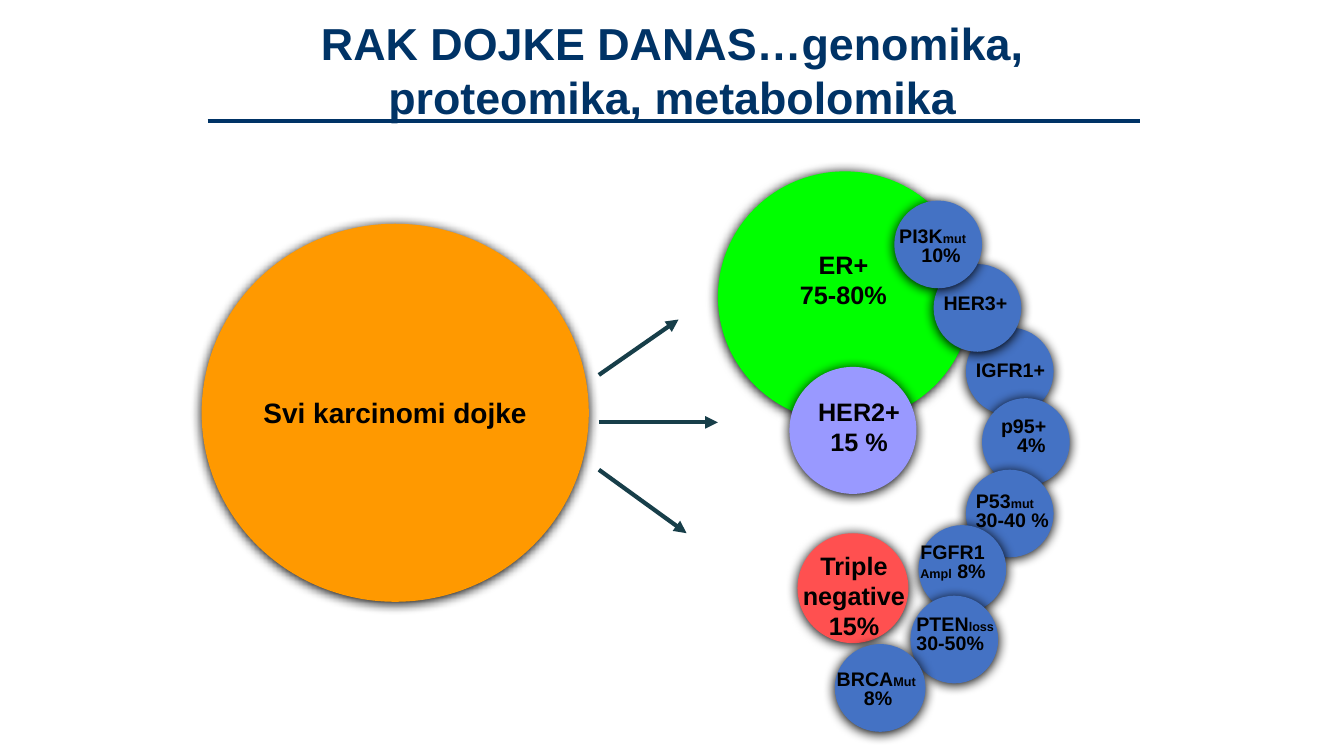
import dataclasses

import lxml.etree
import pptx
import pptx.dml.color
import pptx.enum.shapes
import pptx.enum.text
import pptx.oxml
import pptx.oxml.ns
import pptx.shapes.autoshape
import pptx.shapes.connector
import pptx.slide
import pptx.text.text
import pptx.util

Inches = pptx.util.Inches
Align = pptx.enum.text.PP_ALIGN
Anchor = pptx.enum.text.MSO_ANCHOR
Fit = pptx.enum.text.MSO_AUTO_SIZE

COLORS = {
    "navy": "003366",
    "black": "000000",
    "teal": "173E49",
    "green": "00FF00",
    "lilac": "9999FF",
    "red": "FF5050",
    "orange": "FF9900",
    "blue": "4472C4",
}
FONT = "Arial"
SMALL = 9
SPOT = 0.87


@dataclasses.dataclass
class Circle:
    left: float
    top: float
    width: float = SPOT
    height: float = SPOT
    color: str = "blue"


@dataclasses.dataclass
class Line:
    runs: list[tuple[str, int]]
    indent: float = 0


@dataclasses.dataclass
class Label:
    left: float
    top: float
    width: float
    height: float
    lines: list[Line]
    align: Align = Align.LEFT
    wrap: bool = True
    space: float = 1.0


@dataclasses.dataclass
class Stroke:
    start: tuple[float, float]
    end: tuple[float, float]
    color: str = "teal"
    weight: float = 3
    arrow: bool = True


def big(*texts: str, size: int = 18) -> list[Line]:
    return [Line([(text, size)]) for text in texts]


def gene(left: float, top: float, width: float, *lines: Line) -> Label:
    return Label(left, top, width, 0.48, list(lines), space=0.8)


CIRCLES = [
    Circle(7.12, 1.7, 2.52, 2.49, "green"),
    Circle(7.83, 3.64, 1.26, 1.26, "lilac"),
    Circle(7.91, 5.29, 1.1, 1.09, "red"),
    Circle(9.58, 3.25),
    Circle(9.74, 3.95),
    Circle(9.58, 4.66),
    Circle(9.11, 5.21),
    Circle(9.26, 2.62),
    Circle(9.03, 5.91),
    Circle(8.87, 1.99),
    Circle(8.28, 6.39, 0.9),
]
SOURCE = Circle(2, 2.22, 3.84, 3.75, "orange")

LABELS = [
    Label(7.83, 2.42, 1.07, 0.71, big("ER+", "75-80%"), Align.CENTER, False),
    Label(8.01, 3.88, 1.02, 0.71, big("HER2+", "15 %"), Align.CENTER, False),
    Label(7.67, 5.41, 1.6, 1.01, big("Triple negative", "15%"), Align.CENTER),
    Label(9.26, 2.84, 1.02, 0.34, big("HER3+", size=14)),
    Label(9.58, 3.5, 1.02, 0.34, big("IGFR1+", size=14)),
    gene(9.83, 4.1, 0.79, Line([("p95+", 14)]), Line([("4%", 14)], 0.16)),
    gene(9.58, 4.85, 1.18, Line([("P53", 14), ("mut", SMALL)]), Line([("30-40 %", 14)])),
    gene(9.03, 5.35, 1.26, Line([("FGFR1", 14)]), Line([("Ampl", SMALL), (" 8%", 14)])),
    gene(8.99, 6.07, 1.22, Line([("PTEN", 14), ("loss", SMALL)]), Line([("30-50%", 14)])),
    gene(8.82, 2.22, 1.26, Line([("PI3K", 14), ("mut", SMALL)]), Line([("10%", 14)], 0.22)),
    gene(8.2, 6.61, 1.18, Line([("BRCA", 14), ("Mut", SMALL)]), Line([("8%", 14)], 0.27)),
]

STROKES = [
    Stroke((2.06, 1.2), (11.31, 1.2), "navy", 2.25, False),
    Stroke((5.94, 3.72), (6.73, 3.17)),
    Stroke((5.94, 4.66), (6.81, 5.29)),
    Stroke((5.94, 4.19), (7.12, 4.19)),
]


def paint(name: str) -> pptx.dml.color.RGBColor:
    return pptx.dml.color.RGBColor.from_string(COLORS[name])


def write(
    frame: pptx.text.text.TextFrame,
    lines: list[Line],
    *,
    color: str = "black",
    align: Align = Align.CENTER,
    anchor: Anchor = Anchor.TOP,
    wrap: bool = True,
    space: float = 1.0,
    fit: Fit = Fit.NONE,
) -> None:
    frame.word_wrap = wrap
    frame.auto_size = fit
    frame.vertical_anchor = anchor
    for index, line in enumerate(lines):
        para = frame.add_paragraph() if index else frame.paragraphs[0]
        para.alignment = align
        para.line_spacing = space
        if line.indent:
            para._p.get_or_add_pPr().set("marL", str(Inches(line.indent)))
        for text, size in line.runs:
            run = para.add_run()
            run.text = text
            run.font.name = FONT
            run.font.size = pptx.util.Pt(size)
            run.font.bold = True
            run.font.color.rgb = paint(color)


def shade(shape: pptx.shapes.autoshape.Shape) -> None:
    shape.shadow.inherit = False
    effects = shape._element.spPr.find(pptx.oxml.ns.qn("a:effectLst"))
    shadow = lxml.etree.SubElement(
        effects,
        pptx.oxml.ns.qn("a:outerShdw"),
        blurRad=str(pptx.util.Pt(8.5)),
        dist=str(pptx.util.Pt(1)),
        dir="5400000",
        rotWithShape="0",
    )
    lxml.etree.SubElement(shadow, pptx.oxml.ns.qn("a:srgbClr"), val=COLORS["black"])


def draw(slide: pptx.slide.Slide, disc: Circle) -> pptx.shapes.autoshape.Shape:
    shape = slide.shapes.add_shape(
        pptx.enum.shapes.MSO_SHAPE.OVAL,
        Inches(disc.left), Inches(disc.top), Inches(disc.width), Inches(disc.height),
    )
    shape.fill.solid()
    shape.fill.fore_color.rgb = paint(disc.color)
    shape.line.fill.background()
    shade(shape)
    return shape


def place(slide: pptx.slide.Slide, label: Label) -> None:
    box = slide.shapes.add_textbox(
        Inches(label.left), Inches(label.top), Inches(label.width), Inches(label.height)
    )
    write(box.text_frame, label.lines, align=label.align, wrap=label.wrap,
          space=label.space, fit=Fit.SHAPE_TO_FIT_TEXT)


def join(slide: pptx.slide.Slide, stroke: Stroke) -> None:
    link = slide.shapes.add_connector(
        pptx.enum.shapes.MSO_CONNECTOR.STRAIGHT,
        *(Inches(value) for value in stroke.start + stroke.end),
    )
    link.line.color.rgb = paint(stroke.color)
    link.line.width = pptx.util.Pt(stroke.weight)
    if stroke.arrow:
        lxml.etree.SubElement(
            link.line._get_or_add_ln(), pptx.oxml.ns.qn("a:tailEnd"), type="triangle"
        )
    lxml.etree.SubElement(link._element.spPr, pptx.oxml.ns.qn("a:effectLst"))


def main() -> None:
    deck = pptx.Presentation()
    deck.slide_width, deck.slide_height = Inches(13.33), Inches(7.5)
    slide = deck.slides.add_slide(deck.slide_layouts[6])
    for stroke in STROKES:
        join(slide, stroke)
    for disc in CIRCLES:
        draw(slide, disc)
    source = draw(slide, SOURCE)
    write(source.text_frame, big("Svi karcinomi dojke", size=20), anchor=Anchor.MIDDLE, wrap=False)
    for label in LABELS:
        place(slide, label)
    title = slide.shapes.add_textbox(Inches(2.17), Inches(0.27), Inches(9), Inches(0.84))
    write(title.text_frame, big("RAK DOJKE DANAS…genomika, proteomika, metabolomika", size=32),
          color="navy", anchor=Anchor.MIDDLE)
    deck.save("out.pptx")


if __name__ == "__main__":
    main()
